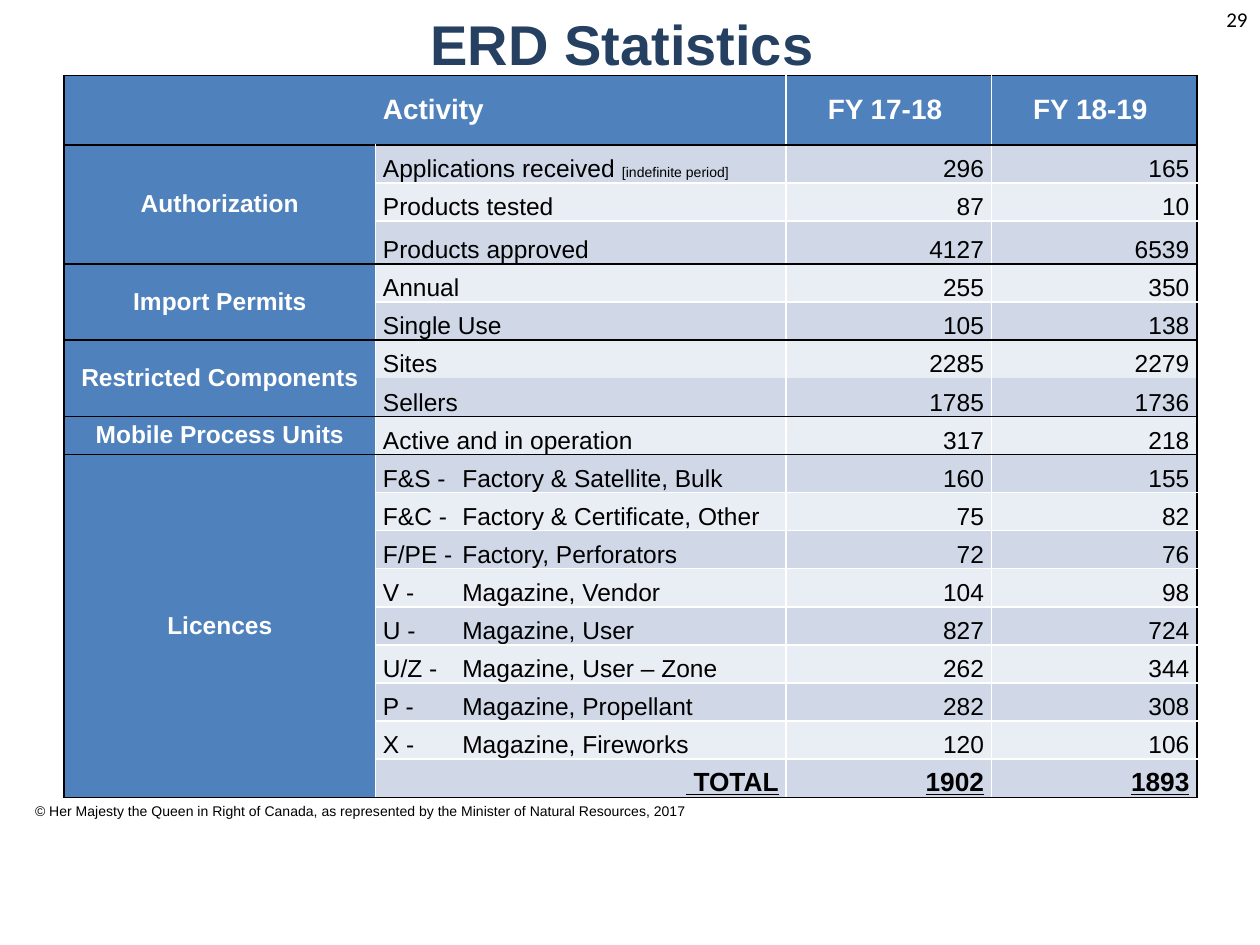
from lxml import etree
from pptx import Presentation
from pptx.dml.color import RGBColor
from pptx.enum.text import MSO_ANCHOR, MSO_AUTO_SIZE, PP_ALIGN
from pptx.oxml.ns import qn
from pptx.util import Inches, Pt

LEFT, CENTER, RIGHT = PP_ALIGN.LEFT, PP_ALIGN.CENTER, PP_ALIGN.RIGHT
MIDDLE, BOTTOM = MSO_ANCHOR.MIDDLE, MSO_ANCHOR.BOTTOM

NAVY = RGBColor(0x25, 0x40, 0x61)
BLUE = RGBColor(0x4F, 0x81, 0xBD)
DARK_BAND = RGBColor(0xD0, 0xD8, 0xE8)
LIGHT_BAND = RGBColor(0xE9, 0xED, 0xF4)
BLACK = RGBColor(0, 0, 0)
WHITE = RGBColor(0xFF, 0xFF, 0xFF)

GRID_COLUMNS, GRID_ROWS = 100, 75

HEADERS = ["FY 17-18 ", "FY 18-19 "]
ACTIVITIES = [
    ("Authorization", [
        ("Applications received ", 296, 165),
        ("Products tested", 87, 10),
        ("Products approved", 4127, 6539),
    ]),
    ("Import Permits", [("Annual", 255, 350), ("Single Use", 105, 138)]),
    ("Restricted Components", [("Sites", 2285, 2279), ("Sellers", 1785, 1736)]),
    ("Mobile Process Units", [("Active and in operation", 317, 218)]),
    ("Licences", [
        ("F&S -\tFactory & Satellite, Bulk", 160, 155),
        ("F&C -\tFactory & Certificate, Other", 75, 82),
        ("F/PE -\tFactory, Perforators", 72, 76),
        ("V -\tMagazine, Vendor", 104, 98),
        ("U -\tMagazine, User", 827, 724),
        ("U/Z -\tMagazine, User – Zone", 262, 344),
        ("P -\tMagazine, Propellant", 282, 308),
        ("X -\tMagazine, Fireworks", 120, 106),
        (" TOTAL", 1902, 1893),
    ]),
]
QUALIFIERS = {"Applications received ": "[indefinite period]"}
UNRULED_GROUP = "Restricted Components"
TOTAL = " TOTAL"

COLUMN_WIDTHS = [24.7, 32.6, 16.3, 16.3]
TABLE_HEIGHT, HEADER_HEIGHT, APPROVED_HEIGHT = 57.3, 5.5, 3.4
APPROVED_ROW = 3


class SlideBuilder:
    """Places styled elements on a grid of 100 columns by 75 rows."""

    def __init__(self, presentation):
        self.unit_x = presentation.slide_width / GRID_COLUMNS
        self.unit_y = presentation.slide_height / GRID_ROWS
        self.slide = presentation.slides.add_slide(presentation.slide_layouts[5])

    def across(self, columns):
        return round(columns * self.unit_x)

    def down(self, rows):
        return round(rows * self.unit_y)

    def area(self, left, top, width, height):
        return self.across(left), self.down(top), self.across(width), self.down(height)

    def run(self, paragraph, text, size, color=BLACK, bold=False, underline=False,
            font="Arial"):
        run = paragraph.add_run()
        run.text = text
        run.font.name, run.font.size = font, Pt(size)
        run.font.bold, run.font.underline = bold, underline
        run.font.color.rgb = color

    def title(self, text, *area):
        shape = self.slide.shapes.title
        shape.left, shape.top, shape.width, shape.height = self.area(*area)
        frame = shape.text_frame
        frame.auto_size = MSO_AUTO_SIZE.NONE
        frame.vertical_anchor = MIDDLE
        frame.paragraphs[0].alignment = CENTER
        self.run(frame.paragraphs[0], text, 32, NAVY, bold=True)

    def text(self, text, area, size, alignment=LEFT, font="Arial"):
        frame = self.slide.shapes.add_textbox(*self.area(*area)).text_frame
        frame.word_wrap = True
        frame.paragraphs[0].alignment = alignment
        self.run(frame.paragraphs[0], text, size, font=font)

    def table(self, left, top, row_heights, column_widths):
        area = self.area(left, top, sum(column_widths), sum(row_heights))
        frame = self.slide.shapes.add_table(len(row_heights), len(column_widths), *area)
        table = frame.table
        for column, width in zip(table.columns, column_widths):
            column.width = self.across(width)
        for row, height in zip(table.rows, row_heights):
            row.height = self.down(height)
        return table

    def cell(self, cell, fill, borders, alignment, anchor):
        """Style a cell; borders are colours for left, right, top and bottom."""
        cell.margin_left = cell.margin_right = Inches(0.06)
        cell.margin_top = cell.margin_bottom = 0
        cell.vertical_anchor = anchor
        properties = cell._tc.get_or_add_tcPr()
        for side, color in zip("LRTB", borders):
            line = etree.SubElement(properties, qn(f"a:ln{side}"), w=str(Pt(1)))
            if color is None:
                etree.SubElement(line, qn("a:noFill"))
            else:
                solid = etree.SubElement(line, qn("a:solidFill"))
                etree.SubElement(solid, qn("a:srgbClr"), val=str(color))
        cell.fill.solid()
        cell.fill.fore_color.rgb = fill
        paragraph = cell.text_frame.paragraphs[0]
        paragraph.alignment = alignment
        return paragraph

    def tab_stop(self, paragraph, position):
        tabs = etree.SubElement(paragraph._p.get_or_add_pPr(), qn("a:tabLst"))
        etree.SubElement(tabs, qn("a:tab"), pos=str(Inches(position)), algn="l")


def fill_header(builder, table):
    for column, text in enumerate(["Activity", ""] + HEADERS):
        borders = (BLACK if column == 0 else WHITE, BLACK if column == 3 else WHITE,
                   BLACK, BLACK)
        paragraph = builder.cell(table.cell(0, column), BLUE, borders, CENTER, MIDDLE)
        if text:
            builder.run(paragraph, text, 16, WHITE, bold=True)
        if column == 0:
            paragraph._p.get_or_add_pPr().set("marL", str(Inches(0.13)))
    table.cell(0, 0).merge(table.cell(0, 1))


def fill_group(builder, table, first, name, records):
    last = first + len(records) - 1
    inner = None if name == UNRULED_GROUP else WHITE
    for row, record in enumerate(records, first):
        category = builder.cell(table.cell(row, 0), BLUE, (BLACK, WHITE, BLACK, BLACK),
                                CENTER, MIDDLE)
        if row == first:
            builder.run(category, name, 14, WHITE, bold=True)
        is_total = record[0] == TOTAL
        size = 15 if is_total else 14
        for column, value in enumerate(record, 1):
            borders = (WHITE, BLACK if column == 3 else WHITE,
                       BLACK if row == first else inner,
                       BLACK if row == last else inner)
            alignment = RIGHT if column > 1 or is_total else LEFT
            paragraph = builder.cell(table.cell(row, column),
                                     DARK_BAND if row % 2 else LIGHT_BAND,
                                     borders, alignment, BOTTOM)
            text = str(value)
            if "\t" in text:
                builder.tab_stop(paragraph, 0.63)
            builder.run(paragraph, text, size, bold=is_total, underline=is_total)
            if value in QUALIFIERS:
                builder.run(paragraph, QUALIFIERS[value], 8)
    if last > first:
        table.cell(first, 0).merge(table.cell(last, 0))


def main():
    presentation = Presentation()
    presentation.slide_width, presentation.slide_height = Inches(10), Inches(7.5)
    builder = SlideBuilder(presentation)

    builder.text("© Her Majesty the Queen in Right of Canada, as represented by the "
                 "Minister of Natural Resources, 2017", (1.8, 63.2, 54.4, 3.7), 8)
    builder.title("ERD Statistics ", 0, 0, 100, 6.9)

    record_count = sum(len(records) for _, records in ACTIVITIES)
    regular = (TABLE_HEIGHT - HEADER_HEIGHT - APPROVED_HEIGHT) / (record_count - 1)
    row_heights = [HEADER_HEIGHT] + [regular] * record_count
    row_heights[APPROVED_ROW] = APPROVED_HEIGHT
    table = builder.table(5.1, 6, row_heights, COLUMN_WIDTHS)
    fill_header(builder, table)
    first = 1
    for name, records in ACTIVITIES:
        fill_group(builder, table, first, name, records)
        first += len(records)

    builder.text("29", (90.2, 0, 9.8, 5.2), 12, RIGHT, "Calibri")
    presentation.save("out.pptx")


if __name__ == "__main__":
    main()
